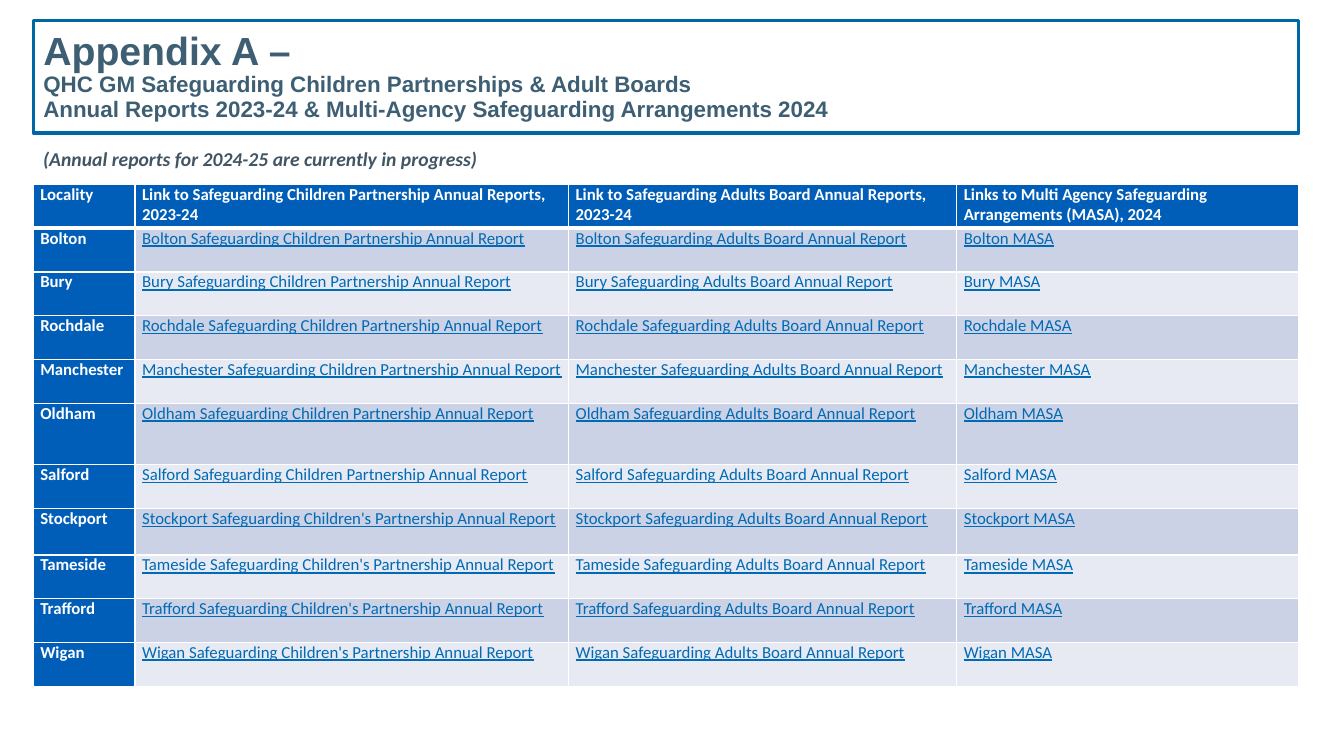
"""Build the appendix slide listing the safeguarding reports of each locality."""
from dataclasses import dataclass

import pptx
import pptx.dml.color
import pptx.enum.text
import pptx.oxml
import pptx.oxml.ns
import pptx.util

Inches = pptx.util.Inches
RGBColor = pptx.dml.color.RGBColor

WHITE = RGBColor(0xFF, 0xFF, 0xFF)
TITLE_TEXT = RGBColor(0x3E, 0x5F, 0x73)
TITLE_LINE = RGBColor(0x00, 0x67, 0xA5)
NOTE_TEXT = RGBColor(0x41, 0x55, 0x63)
HEADER_FILL = RGBColor(0x00, 0x5E, 0xB8)
LINK_TEXT = RGBColor(0x00, 0x6A, 0xB4)
BANDS = (RGBColor(0xCC, 0xD2, 0xE6), RGBColor(0xE7, 0xEA, 0xF3))

LEFT, WIDTH = 0.33, 12.55
TABLE_TOP, TABLE_HEIGHT = 1.83, 4.98
COLUMN_WIDTHS = (1.01, 4.3, 3.85, 3.39)
HEADERS = (
    "Locality",
    "Link to Safeguarding Children Partnership Annual Reports, 2023-24",
    "Link to Safeguarding Adults Board Annual Reports, 2023-24",
    "Links to Multi Agency Safeguarding Arrangements (MASA), 2024",
)


@dataclass(frozen=True)
class Locality:
    """A locality, its wording for children and its own row height if any."""
    name: str
    children: str = "Children"
    height: float | None = None

    def texts(self) -> tuple[str, ...]:
        return (
            self.name,
            f"{self.name} Safeguarding {self.children} Partnership Annual Report",
            f"{self.name} Safeguarding Adults Board Annual Report",
            f"{self.name} MASA",
        )


LOCALITIES = (
    Locality("Bolton"),
    Locality("Bury"),
    Locality("Rochdale"),
    Locality("Manchester"),
    Locality("Oldham", height=0.61),
    Locality("Salford"),
    Locality("Stockport", "Children's", 0.46),
    Locality("Tameside", "Children's"),
    Locality("Trafford", "Children's"),
    Locality("Wigan", "Children's"),
)


def add_run(p, text: str, *, size: float, color: RGBColor, font: str = "Calibri",
            bold: bool = False, italic: bool = False, underline: bool = False) -> None:
    """Add formatted text to a paragraph."""
    r = p.add_run()
    r.text = text
    r.font.name = font
    r.font.size = pptx.util.Pt(size)
    r.font.color.rgb = color
    r.font.bold = bold
    r.font.italic = italic
    r.font.underline = underline


def add_title(slide) -> None:
    """Place the title in its outlined, slightly rounded box."""
    sp = slide.shapes.title
    sp.left, sp.top = Inches(LEFT), Inches(0.2)
    sp.width, sp.height = Inches(WIDTH), Inches(1.12)
    sp._element.spPr.append(pptx.oxml.parse_xml(
        f'<a:prstGeom {pptx.oxml.ns.nsdecls("a")} prst="roundRect">'
        '<a:avLst><a:gd name="adj" fmla="val 1500"/></a:avLst></a:prstGeom>'))
    sp.line.color.rgb = TITLE_LINE
    sp.line.width = pptx.util.Pt(2.25)
    tf = sp.text_frame
    tf.word_wrap = True
    tf.auto_size = pptx.enum.text.MSO_AUTO_SIZE.NONE
    tf.vertical_anchor = pptx.enum.text.MSO_ANCHOR.MIDDLE
    p = tf.paragraphs[0]
    p.alignment = pptx.enum.text.PP_ALIGN.LEFT
    p.line_spacing = 0.9
    lines = (
        ("Appendix A –", 28),
        ("QHC GM Safeguarding Children Partnerships & Adult Boards", 16),
        ("Annual Reports 2023-24 & Multi-Agency Safeguarding Arrangements 2024", 16),
    )
    for i, (text, size) in enumerate(lines):
        if i:
            p.add_line_break()
        add_run(p, text, size=size, color=TITLE_TEXT, font="Arial", bold=True)


def add_note(slide) -> None:
    """Add the note on reports in progress."""
    sp = slide.shapes.add_textbox(Inches(LEFT), Inches(1.41), Inches(6.67), Inches(0.34))
    tf = sp.text_frame
    tf.word_wrap = True
    add_run(tf.paragraphs[0], "(Annual reports for 2024-25 are currently in progress)",
            size=14, color=NOTE_TEXT, bold=True, italic=True)


def set_borders(cell, top: float, bottom: float) -> None:
    """Give a cell white borders, with top and bottom widths in points."""
    tc_pr = cell._tc.get_or_add_tcPr()
    widths = {"lnL": 1, "lnR": 1, "lnT": top, "lnB": bottom}
    for i, (tag, width) in enumerate(widths.items()):
        tc_pr.insert(i, pptx.oxml.parse_xml(
            f'<a:{tag} {pptx.oxml.ns.nsdecls("a")} w="{pptx.util.Pt(width)}">'
            f'<a:solidFill><a:srgbClr val="{WHITE}"/></a:solidFill></a:{tag}>'))


def fill_cell(cell, text: str, fill: RGBColor, *, heading: bool,
              top: float = 1, bottom: float = 1) -> None:
    """Write and format one table cell as a heading or a link."""
    cell.margin_left = cell.margin_right = Inches(0.07)
    cell.margin_top = cell.margin_bottom = 0
    cell.fill.solid()
    cell.fill.fore_color.rgb = fill
    set_borders(cell, top, bottom)
    add_run(cell.text_frame.paragraphs[0], text, size=12,
            color=WHITE if heading else LINK_TEXT, bold=heading, underline=not heading)


def add_reports_table(slide) -> None:
    """Add the table of localities and their reports."""
    table = slide.shapes.add_table(
        len(LOCALITIES) + 1, len(HEADERS), Inches(LEFT), Inches(TABLE_TOP),
        Inches(WIDTH), Inches(TABLE_HEIGHT)).table
    table.first_col = True
    for column, width in zip(table.columns, COLUMN_WIDTHS):
        column.width = Inches(width)
    own = [loc.height for loc in LOCALITIES if loc.height]
    usual = (TABLE_HEIGHT - sum(own)) / (len(LOCALITIES) + 1 - len(own))
    table.rows[0].height = Inches(usual)
    for c, text in enumerate(HEADERS):
        fill_cell(table.cell(0, c), text, HEADER_FILL, heading=True, bottom=3)
    for i, loc in enumerate(LOCALITIES):
        table.rows[i + 1].height = Inches(loc.height or usual)
        for c, text in enumerate(loc.texts()):
            fill_cell(table.cell(i + 1, c), text, BANDS[i % 2] if c else HEADER_FILL,
                      heading=c == 0, top=1 if i else 3)


def main() -> None:
    """Build and save the slide."""
    prs = pptx.Presentation()
    prs.slide_width, prs.slide_height = Inches(13.33), Inches(7.5)
    slide = prs.slides.add_slide(prs.slide_layouts[5])
    add_title(slide)
    add_note(slide)
    add_reports_table(slide)
    prs.save("out.pptx")


if __name__ == "__main__":
    main()
